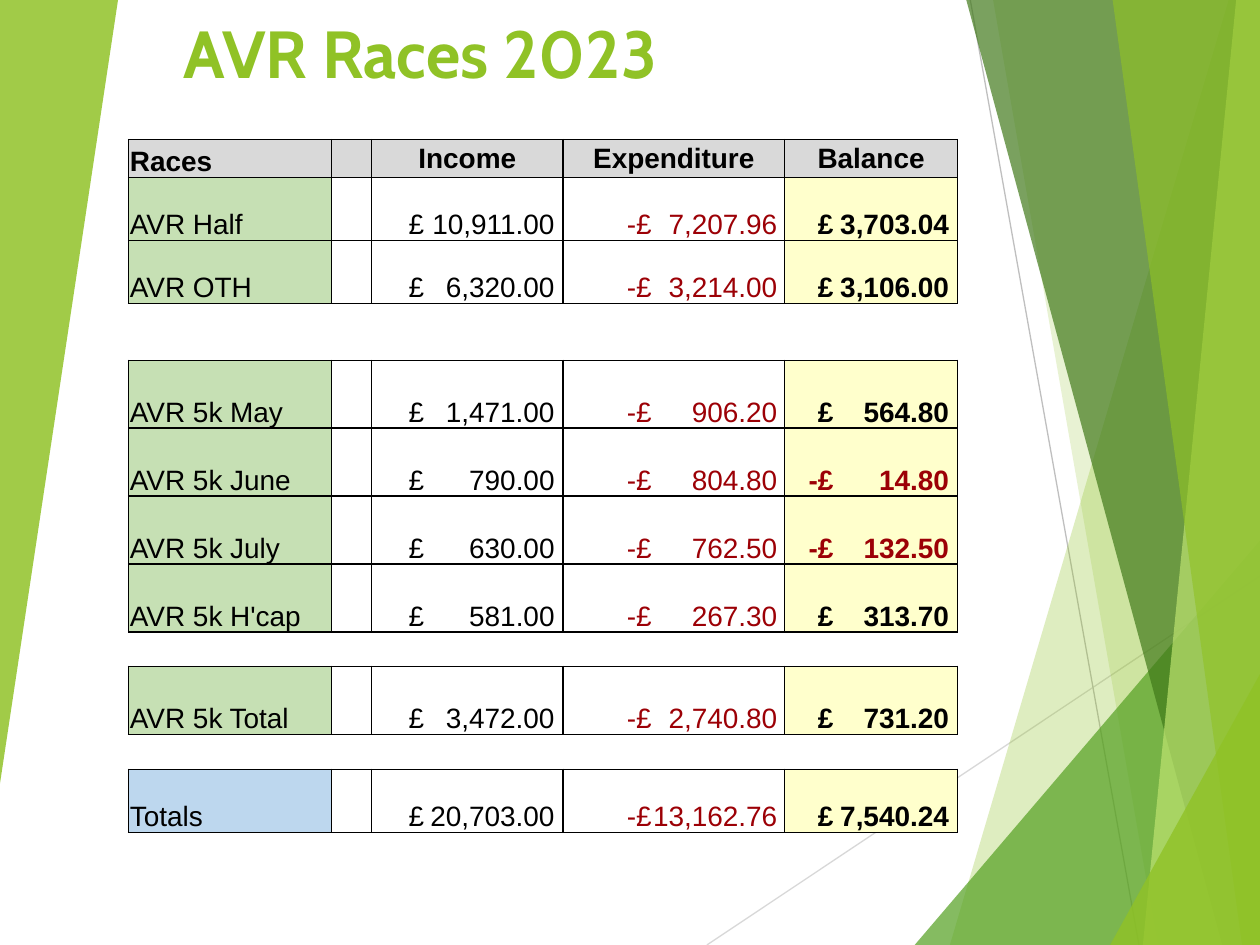
from dataclasses import dataclass

from lxml import etree
from pptx import Presentation
from pptx import util as u
from pptx.dml.color import RGBColor
from pptx.enum import shapes, text
from pptx.oxml.ns import qn


@dataclass(frozen=True)
class Theme:
    accent: str = "90C226"
    leaf: str = "54A021"
    forest: str = "3F7818"
    lime: str = "BFE471"
    ink: str = "000000"
    loss: str = "9C0006"
    header: str = "D9D9D9"
    race: str = "C6E0B4"
    total: str = "BDD7EE"
    balance: str = "FFFFCC"
    title_font: str = "Cabin"
    table_font: str = "Arial"
    title_size: int = 38
    table_size: int = 16
    gap_size: int = 8
    line_width: float = 0.75


THEME = Theme()
WIDTH, HEIGHT = 25.4, 19.05
CORNER, TOP_RIGHT = (WIDTH, HEIGHT), (WIDTH, 0)

RAYS = [
    ((14.25, HEIGHT), (WIDTH, 11.61), "D8D8D8"),
    ((19.56, 0), (22.96, HEIGHT), "BFBFBF"),
]
# Outline in cm, colour, opacity in percent
FACETS = [
    ([(24.77, 0), (19.15, HEIGHT), CORNER, TOP_RIGHT], THEME.accent, 29),
    ([(20.02, 0), (23.34, HEIGHT), CORNER, TOP_RIGHT], THEME.accent, 20),
    ([(18.44, HEIGHT), (WIDTH, 10.9), CORNER], THEME.leaf, 71),
    ([(19.48, 0), (24.64, HEIGHT), CORNER, TOP_RIGHT], THEME.forest, 69),
    ([(24.92, 0), (23.04, HEIGHT), CORNER, TOP_RIGHT], THEME.lime, 69),
    ([(22.43, 0), (25.04, HEIGHT), CORNER, TOP_RIGHT], THEME.accent, 64),
    ([(22.38, HEIGHT), (WIDTH, 13.59), CORNER], THEME.accent, 80),
    ([(0, 0), (2.38, 0), (0, 15.8)], THEME.accent, 84),
]

COLUMN_WIDTHS = [4.09, 0.81, 3.86, 4.47, 3.48]
# Right edges of the currency sign and of the number, per amount column
AMOUNT_TABS = {2: (1.03, 3.66), 3: (1.76, 4.29), 4: (0.95, 3.28)}
HEADINGS = ["Races", "", "Income", "Expenditure", "Balance"]
# Row height in cm, then race, income, expenditure, balance; no texts make a gap
RACES = [
    (1.27, "AVR Half", "£ 10,911.00", "-£ 7,207.96", "£ 3,703.04"),
    (1.27, "AVR OTH", "£ 6,320.00", "-£ 3,214.00", "£ 3,106.00"),
    (1.15,),
    (1.37, "AVR 5k May", "£ 1,471.00", "-£ 906.20", "£ 564.80"),
    (1.37, "AVR 5k June", "£ 790.00", "-£ 804.80", "-£ 14.80"),
    (1.37, "AVR 5k July", "£ 630.00", "-£ 762.50", "-£ 132.50"),
    (1.37, "AVR 5k H'cap", "£ 581.00", "-£ 267.30", "£ 313.70"),
    (0.69,),
    (1.37, "AVR 5k Total", "£ 3,472.00", "-£ 2,740.80", "£ 731.20"),
    (0.71,),
    (1.27, "Totals", "£ 20,703.00", "-£ 13,162.76", "£ 7,540.24"),
]


def rgb(value):
    return RGBColor.from_string(value)


def add_ray(slide, start, end, color):
    ray = slide.shapes.add_connector(
        shapes.MSO_CONNECTOR.STRAIGHT, *[u.Cm(value) for value in start + end])
    ray.line.color.rgb = rgb(color)
    ray.line.width = u.Pt(THEME.line_width)
    etree.SubElement(ray._element.spPr, qn("a:effectLst"))


def add_facet(slide, points, color, opacity):
    corners = [(u.Cm(x), u.Cm(y)) for x, y in points]
    builder = slide.shapes.build_freeform(*corners[0])
    builder.add_line_segments(corners[1:], close=True)
    facet = builder.convert_to_shape()
    facet.shadow.inherit = False
    facet.line.fill.background()
    facet.fill.solid()
    facet.fill.fore_color.rgb = rgb(color)
    tint = facet._element.spPr.find(".//" + qn("a:srgbClr"))
    etree.SubElement(tint, qn("a:alpha"), val=str(opacity * 1000))


def format_runs(para, font, size, color, bold):
    for span in para.runs:
        span.font.name = font
        span.font.size = u.Pt(size)
        span.font.color.rgb = rgb(color)
        span.font.bold = bold


def add_title(slide, title):
    box = slide.shapes.add_textbox(u.Cm(3.45), 0, u.Cm(14.91), u.Cm(2.13))
    frame = box.text_frame
    frame.word_wrap = True
    frame.auto_size = text.MSO_AUTO_SIZE.SHAPE_TO_FIT_TEXT
    frame.margin_left = frame.margin_right = u.Cm(0.25)
    frame.margin_top = frame.margin_bottom = u.Cm(0.25)
    frame.text = title
    format_runs(frame.paragraphs[0], THEME.title_font, THEME.title_size,
                THEME.accent, True)


def set_borders(cell, sides):
    """Draw the named sides (L, R, T, B) and clear the others."""
    properties = cell._tc.get_or_add_tcPr()
    for index, side in enumerate("LRTB"):
        line = etree.Element(qn("a:ln" + side), w=str(u.Pt(THEME.line_width)))
        if side in sides:
            fill = etree.SubElement(line, qn("a:solidFill"))
            etree.SubElement(fill, qn("a:srgbClr"), val=THEME.ink)
        else:
            etree.SubElement(line, qn("a:noFill"))
        properties.insert(index, line)


def set_tabs(para, positions):
    tabs = etree.SubElement(para._p.get_or_add_pPr(), qn("a:tabLst"))
    for position in positions:
        etree.SubElement(tabs, qn("a:tab"), pos=str(u.Cm(position)), algn="r")


def fill_cell(cell, content, fill=None, sides="LRTB", color=THEME.ink,
              bold=False, align=text.PP_ALIGN.LEFT,
              anchor=text.MSO_ANCHOR.BOTTOM, tabs=()):
    cell.margin_left = cell.margin_right = cell.margin_top = u.Cm(0.03)
    cell.margin_bottom = 0
    cell.vertical_anchor = anchor
    if fill:
        cell.fill.solid()
        cell.fill.fore_color.rgb = rgb(fill)
    else:
        cell.fill.background()
    set_borders(cell, sides)
    para = cell.text_frame.paragraphs[0]
    if not content:
        etree.SubElement(para._p, qn("a:endParaRPr"),
                         sz=str(THEME.gap_size * 100))
        return
    para.alignment = align
    if tabs:
        set_tabs(para, tabs)
    para.text = content
    format_runs(para, THEME.table_font, THEME.table_size, color, bold)


def fill_header(cells):
    for column, (cell, heading) in enumerate(zip(cells, HEADINGS)):
        style = {} if column == 0 else {"align": text.PP_ALIGN.CENTER,
                                        "anchor": text.MSO_ANCHOR.MIDDLE}
        fill_cell(cell, heading, THEME.header, bold=True, **style)


def fill_race(cells, race, *amounts):
    fill_cell(cells[0], race, THEME.total if race == "Totals" else THEME.race)
    fill_cell(cells[1], "")
    for column, amount in enumerate(amounts, start=2):
        is_balance = column == 4
        fill_cell(cells[column], "\t" + amount.replace(" ", "\t"),
                  fill=THEME.balance if is_balance else None,
                  color=THEME.loss if amount.startswith("-") else THEME.ink,
                  bold=is_balance, tabs=AMOUNT_TABS[column])


def add_race_table(slide):
    heights = [0.76] + [height for height, *_ in RACES]
    table = slide.shapes.add_table(
        len(heights), len(COLUMN_WIDTHS), u.Cm(2.59), u.Cm(2.81),
        u.Cm(sum(COLUMN_WIDTHS)), u.Cm(sum(heights))).table
    table.first_row = table.horz_banding = False
    for column, width in zip(table.columns, COLUMN_WIDTHS):
        column.width = u.Cm(width)
    for row, height in zip(table.rows, heights):
        row.height = u.Cm(height)
    header, *body = [list(row.cells) for row in table.rows]
    fill_header(header)
    for cells, (_, *texts) in zip(body, RACES):
        if texts:
            fill_race(cells, *texts)
        else:
            for cell in cells:
                fill_cell(cell, "", sides="TB")


def main():
    deck = Presentation()
    deck.slide_width, deck.slide_height = u.Cm(WIDTH), u.Cm(HEIGHT)
    slide = deck.slides.add_slide(deck.slide_layouts[6])
    for ray in RAYS:
        add_ray(slide, *ray)
    for facet in FACETS:
        add_facet(slide, *facet)
    add_title(slide, "AVR Races 2023")
    add_race_table(slide)
    deck.save("out.pptx")


if __name__ == "__main__":
    main()
